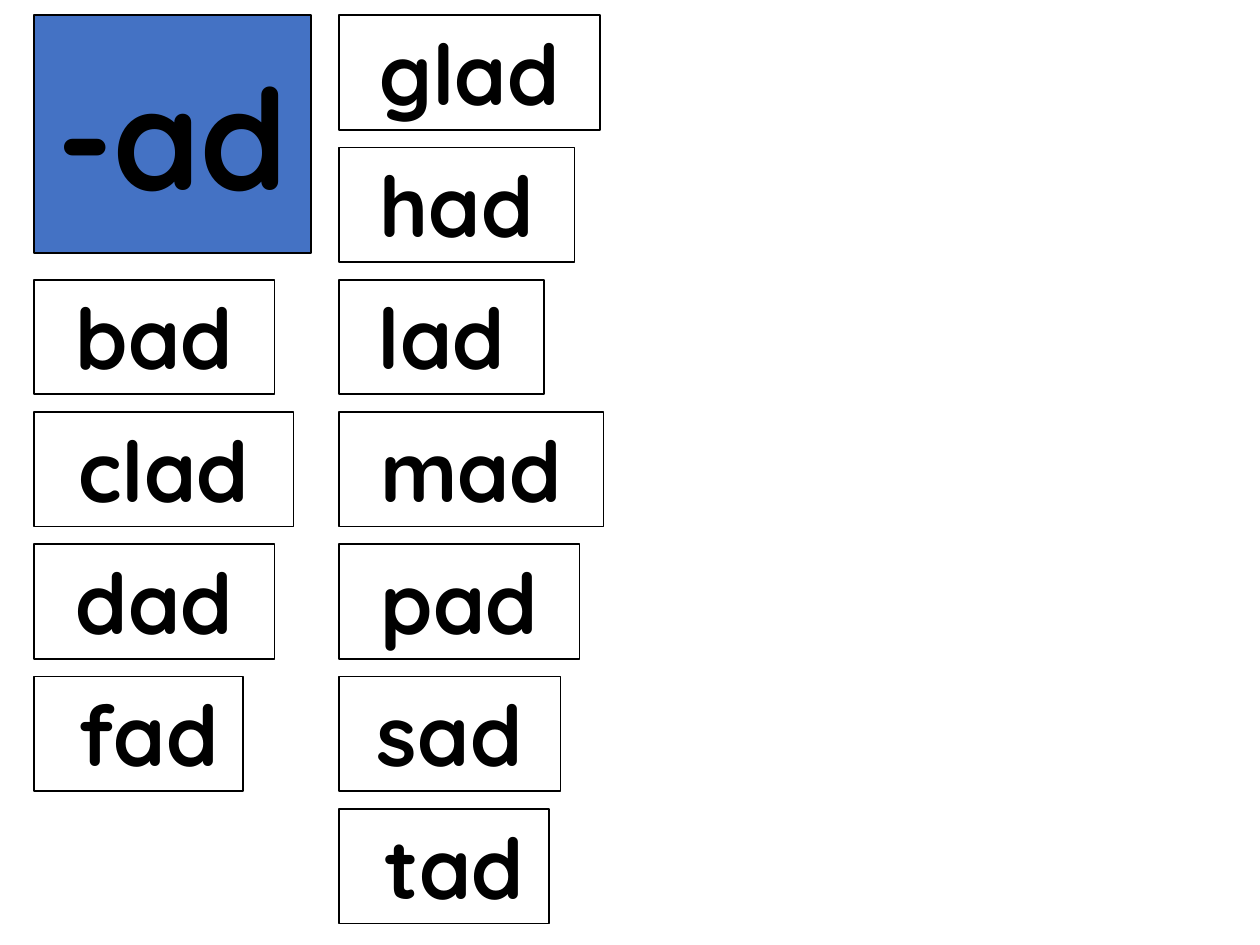
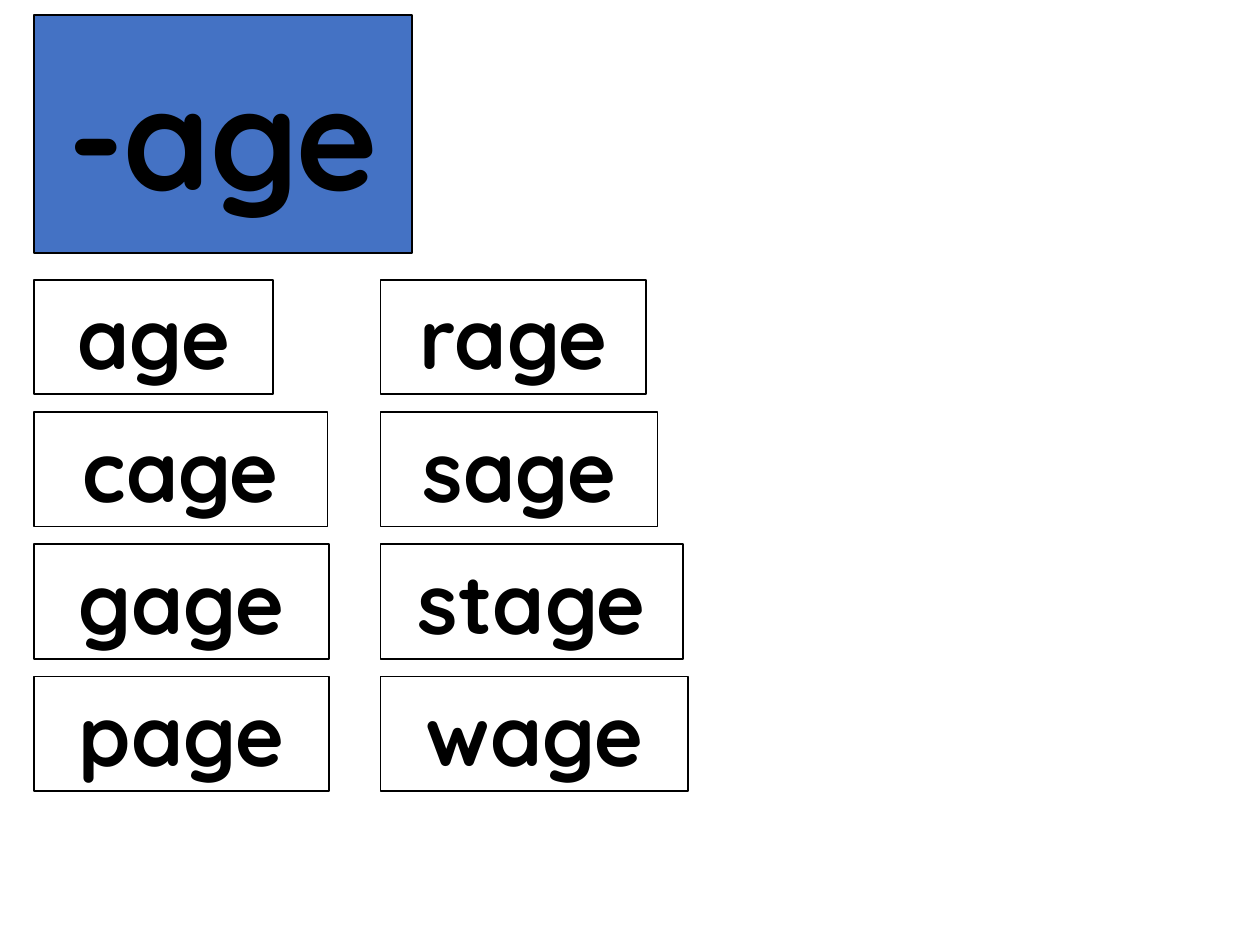
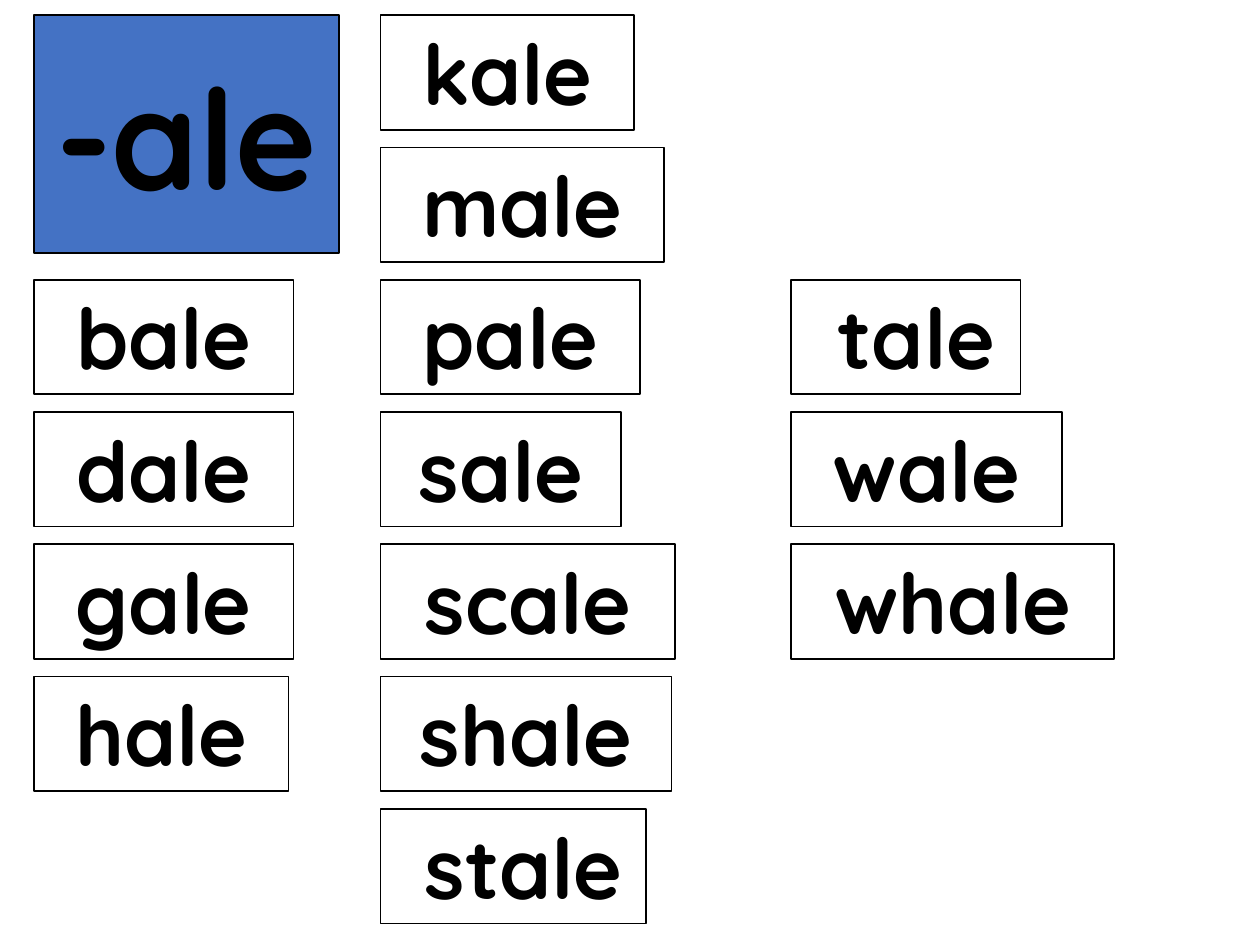
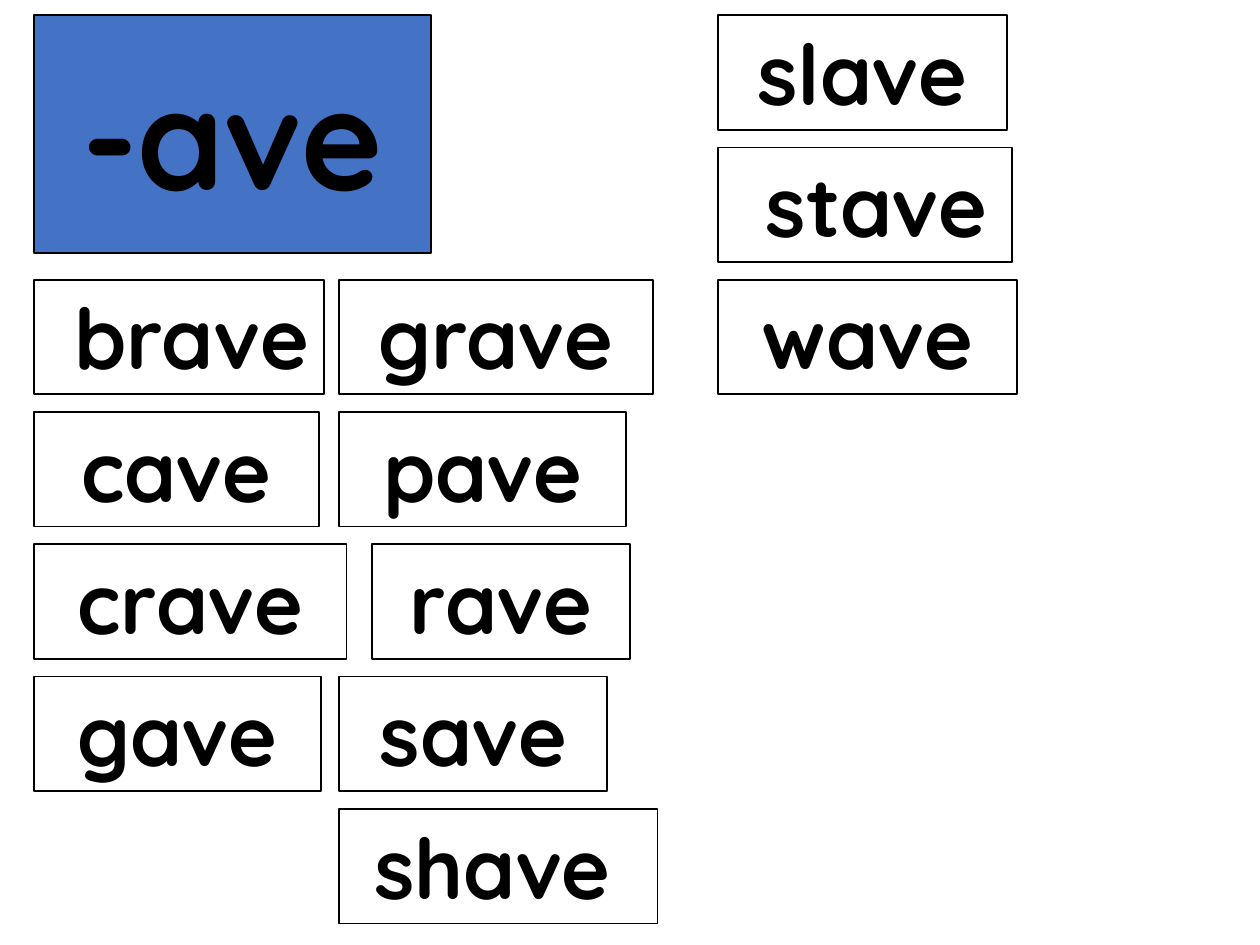
from dataclasses import dataclass

from pptx import Presentation
from pptx.dml.color import RGBColor
from pptx.enum import shapes, text
from pptx.util import Inches, Pt


@dataclass(frozen=True)
class Theme:
    font: str = "Quicksand"
    ink: RGBColor = RGBColor(0x00, 0x00, 0x00)
    card: RGBColor = RGBColor(0xFF, 0xFF, 0xFF)
    heading: RGBColor = RGBColor(0x44, 0x72, 0xC4)
    word_size: int = 48
    heading_size: int = 80


theme = Theme()

# Card grid, in inches
LEFT, TOP, ROW_STEP = 0.27, 0.12, 1.05
CARD_H, HEADING_H = 0.91, 1.89
INSET = 0.1

# Left inset of the words that sit off centre
insets = {"fad": 0.26, "tad": 0.26, "tale": 0.26, "stale": 0.26,
          "stave": 0.28, "brave": 0.3, "shave": 0.28}
left_aligned = {"shave"}

# Word families: ending, heading width, columns of (left, first row, {word: width})
families = [
    ("-ad", 2.2, [
        (2.69, 0, {"glad": 2.07, "had": 1.87, "lad": 1.63, "mad": 2.1,
                   "pad": 1.91, "sad": 1.76, "tad": 1.67}),
        (LEFT, 2, {"bad": 1.91, "clad": 2.06, "dad": 1.91, "fad": 1.66}),
    ]),
    ("-age", 3, [
        (3.02, 2, {"rage": 2.11, "sage": 2.2, "stage": 2.4, "wage": 2.44}),
        (LEFT, 2, {"age": 1.9, "cage": 2.33, "gage": 2.34, "page": 2.34}),
    ]),
    ("-ale", 2.42, [
        (6.28, 2, {"tale": 1.82, "wale": 2.15, "whale": 2.56}),
        (3.02, 0, {"kale": 2.01, "male": 2.25, "pale": 2.06, "sale": 1.91,
                   "scale": 2.34, "shale": 2.31, "stale": 2.11}),
        (LEFT, 2, {"bale": 2.06, "dale": 2.06, "gale": 2.06, "hale": 2.02}),
    ]),
    ("-ave", 3.15, [
        (5.7, 0, {"slave": 2.29, "stave": 2.33, "wave": 2.37}),
        (2.69, 2, {"grave": 2.49, "pave": 2.28}),
        (2.95, 4, {"rave": 2.05}),
        (2.69, 5, {"save": 2.13, "shave": 2.53}),
        (LEFT, 2, {"brave": 2.3, "cave": 2.26, "crave": 2.48, "gave": 2.28}),
    ]),
]


def style_card(sp, label, fill, size, anchor):
    """Give a card its fill, outline and centred bold label."""
    sp.fill.solid()
    sp.fill.fore_color.rgb = fill
    sp.line.color.rgb = theme.ink
    sp.line.width = Pt(1)
    tf = sp.text_frame
    tf.text = label
    tf.auto_size = text.MSO_AUTO_SIZE.NONE
    tf.vertical_anchor = anchor
    p = tf.paragraphs[0]
    p.alignment = text.PP_ALIGN.CENTER
    p.font.name = theme.font
    p.font.size = Pt(size)
    p.font.bold = True
    p.font.color.rgb = theme.ink
    return tf


prs = Presentation()
prs.slide_width, prs.slide_height = Inches(10), Inches(7.5)
title_only = prs.slide_layouts[5]

for ending, heading_w, columns in families:
    s = prs.slides.add_slide(title_only)

    # Heading card
    title = s.shapes.title
    title.left, title.top = Inches(LEFT), Inches(TOP)
    title.width, title.height = Inches(heading_w), Inches(HEADING_H)
    tf = style_card(title, ending, theme.heading, theme.heading_size,
                    text.MSO_ANCHOR.MIDDLE)
    tf.word_wrap = True

    # Word cards
    for left, first_row, words in columns:
        for row, (word, width) in enumerate(words.items(), first_row):
            sp = s.shapes.add_shape(
                shapes.MSO_SHAPE.RECTANGLE, Inches(left),
                Inches(TOP + row * ROW_STEP), Inches(width), Inches(CARD_H))
            sp.shadow.inherit = False
            tf = style_card(sp, word, theme.card, theme.word_size,
                            text.MSO_ANCHOR.TOP)
            tf.word_wrap = False
            tf.margin_left = Inches(insets.get(word, INSET))
            if word in left_aligned:
                tf.paragraphs[0].alignment = text.PP_ALIGN.LEFT

prs.save("out.pptx")
